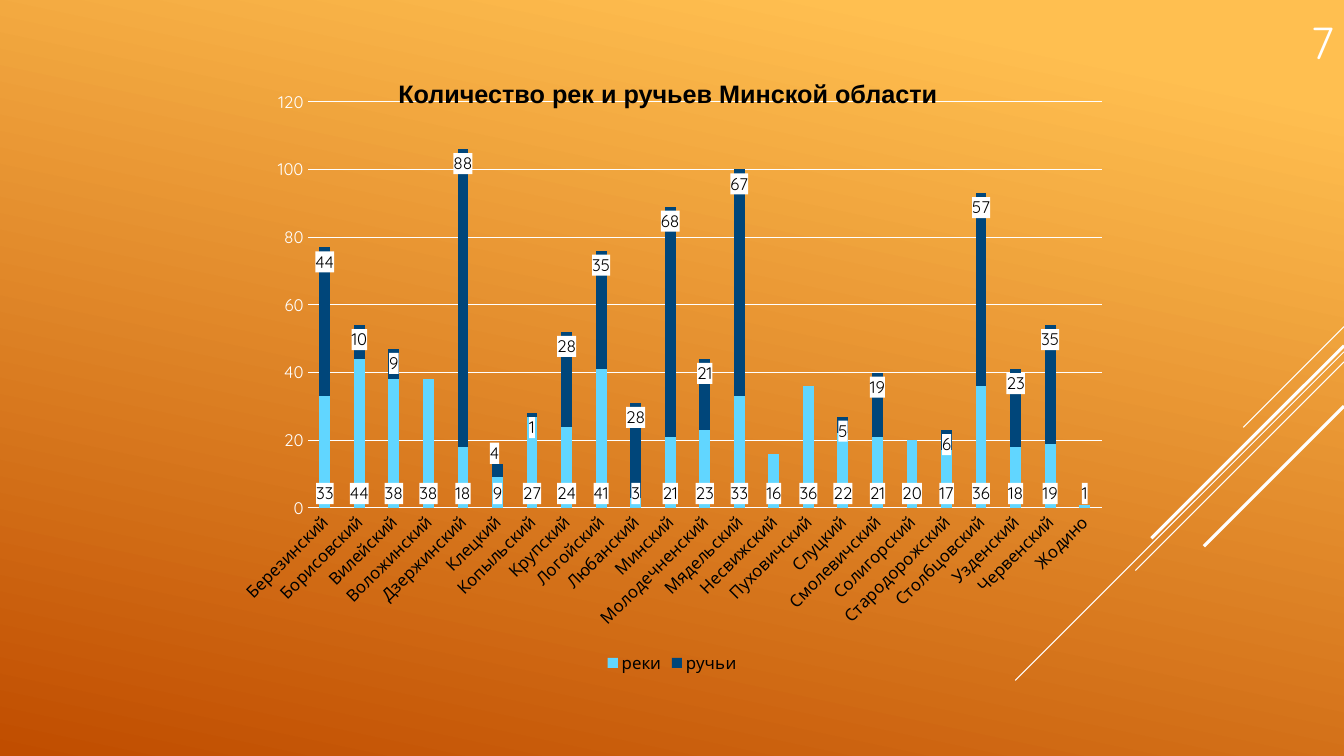
from lxml.etree import SubElement
from pptx import Presentation
from pptx.chart.data import CategoryChartData
from pptx.dml.color import RGBColor
from pptx.enum.chart import XL_CHART_TYPE, XL_LABEL_POSITION, XL_LEGEND_POSITION, XL_TICK_MARK
from pptx.enum.shapes import MSO_CONNECTOR
from pptx.enum.text import MSO_ANCHOR, PP_ALIGN
from pptx.oxml import parse_xml
from pptx.oxml.ns import nsdecls, qn
from pptx.util import Emu, Pt

PX = 9144  # one hundredth of an inch
CHART_WIDTH, CHART_HEIGHT = 889, 593

WHITE = RGBColor(0xFF, 0xFF, 0xFF)
BLACK = RGBColor(0x00, 0x00, 0x00)
AMBER = RGBColor(0xFF, 0xBF, 0x50)
RUST = RGBColor(0xC0, 0x4D, 0x00)
SKY = RGBColor(0x61, 0xD6, 0xFF)
NAVY = RGBColor(0x00, 0x46, 0x7A)

AXIS_FONT = {"name": "Quicksand", "size": Pt(12)}

# District, rivers, streams
DISTRICTS = [
    ("Березинский", 33, 44), ("Борисовский", 44, 10), ("Вилейский", 38, 9),
    ("Воложинский", 38, None), ("Дзержинский", 18, 88), ("Клецкий", 9, 4),
    ("Копыльский", 27, 1), ("Крупский", 24, 28), ("Логойский", 41, 35),
    ("Любанский", 3, 28), ("Минский", 21, 68), ("Молодечненский", 23, 21),
    ("Мядельский", 33, 67), ("Несвижский", 16, None), ("Пуховичский", 36, None),
    ("Слуцкий", 22, 5), ("Смолевичский", 21, 19), ("Солигорский", 20, None),
    ("Стародорожский", 17, 6), ("Столбцовский", 36, 57), ("Узденский", 18, 23),
    ("Червенский", 19, 35), ("Жодино", 1, None),
]
RAISED_LABEL = 5  # the Клецкий streams label stands above its short bar

# Start height at the right edge, horizontal run, line width in points
DIAGONALS = [(324, 100, 0.75), (349, 326, 0.75), (359, 207, 0.75),
             (343, 191, 2.25), (403, 139, 2.25)]


def px(*lengths):
    return [Emu(length * PX) for length in lengths]


def apply(target, values):
    for name, value in values.items():
        setattr(target, name, value)


def set_font(font, color, **values):
    apply(font, values)
    font.color.rgb = color


def paint_background(page):
    fill = page.background.fill
    fill.gradient()
    fill.gradient_angle = 258
    for stop, color, position in zip(fill.gradient_stops, (AMBER, RUST), (0.1, 1)):
        stop.color.rgb = color
        stop.position = position


def add_diagonal(page, top, run, width):
    line = page.shapes.add_connector(
        MSO_CONNECTOR.STRAIGHT, *px(1333, top, 1333 - run, top + run))
    line.line.color.rgb = WHITE
    line.line.width = Pt(width)
    SubElement(line._element.spPr, qn("a:effectLst"))


def write_text(box, text, align, anchor, wrap, color, **font):
    frame = box.text_frame
    apply(frame, {"word_wrap": wrap, "vertical_anchor": anchor})
    para = frame.paragraphs[0]
    para.alignment = align
    span = para.add_run()
    span.text = text
    set_font(span.font, color, **font)


def manual_layout(left, top, **values):
    values.update(x=left / CHART_WIDTH, y=top / CHART_HEIGHT)
    order = ("layoutTarget", "xMode", "yMode", "x", "y", "w", "h")
    parts = "".join(f'<c:{name} val="{values[name]}"/>'
                    for name in order if name in values)
    return parse_xml(f'<c:layout {nsdecls("c")}><c:manualLayout>{parts}'
                     "</c:manualLayout></c:layout>")


def format_axes(chart):
    districts, counts = chart.category_axis, chart.value_axis
    for axis, color in ((districts, BLACK), (counts, WHITE)):
        apply(axis, {"major_tick_mark": XL_TICK_MARK.NONE,
                     "minor_tick_mark": XL_TICK_MARK.NONE})
        set_font(axis.tick_labels.font, color, **AXIS_FONT)
        # Automatic label rotation
        for body in axis._element.xpath("c:txPr/a:bodyPr"):
            body.set("rot", "-60000000")
    apply(counts, {"minimum_scale": 0, "maximum_scale": 120, "major_unit": 20,
                   "has_major_gridlines": True})
    counts.format.line.fill.background()
    for line in (districts.format.line, counts.major_gridlines.format.line):
        line.color.rgb = WHITE
        line.width = Pt(0.75)


def format_series(series, color, position):
    series.format.fill.solid()
    series.format.fill.fore_color.rgb = color
    labels = series.data_labels
    apply(labels, {"show_value": True, "position": position})
    set_font(labels.font, BLACK, **AXIS_FONT)


def raise_label(series, index):
    label = series.points[index].data_label
    set_font(label.font, BLACK, **AXIS_FONT)
    label.position = XL_LABEL_POSITION.INSIDE_END
    for mark in series._element.xpath("c:dLbls/c:dLbl/c:idx"):
        mark.addnext(manual_layout(-3, -25))


def whiten_labels(series):
    for text in series._element.xpath("c:dLbls//c:txPr"):
        text.addprevious(parse_xml(
            f'<c:spPr {nsdecls("c", "a")}><a:solidFill>'
            f'<a:srgbClr val="{WHITE}"/></a:solidFill></c:spPr>'))


def add_river_chart(page):
    names, rivers, streams = zip(*DISTRICTS)
    data = CategoryChartData()
    data.categories = names
    data.add_series("реки", rivers)
    data.add_series("ручьи", streams)
    chart = page.shapes.add_chart(
        XL_CHART_TYPE.COLUMN_STACKED, *px(222, 79, CHART_WIDTH, CHART_HEIGHT), data).chart
    apply(chart, {"has_title": False, "has_legend": True})
    set_font(chart.font, WHITE, name="Quicksand", size=Pt(10))
    apply(chart.legend, {"position": XL_LEGEND_POSITION.BOTTOM,
                         "include_in_layout": False})
    set_font(chart.legend.font, BLACK, **AXIS_FONT)
    format_axes(chart)

    # Stacked columns and their labels
    plot = chart.plots[0]
    apply(plot, {"gap_width": 219, "overlap": 100, "vary_by_categories": False})
    river_series, stream_series = plot.series
    format_series(river_series, SKY, XL_LABEL_POSITION.INSIDE_BASE)
    format_series(stream_series, NAVY, XL_LABEL_POSITION.INSIDE_END)
    raise_label(stream_series, RAISED_LABEL)
    for series in plot.series:
        whiten_labels(series)

    # Fixed plot area
    area = chart._chartSpace.xpath("c:chart/c:plotArea")[0]
    for layout in area.xpath("c:layout"):
        area.remove(layout)
    area.insert(0, manual_layout(83, 22, layoutTarget="inner", xMode="edge", yMode="edge",
                                 w=788 / CHART_WIDTH, h=403 / CHART_HEIGHT))


def add_heading(page):
    title = page.shapes.title
    left, top, width, height = px(385, 73, 576, 40)
    apply(title, {"left": left, "top": top, "width": width, "height": height})
    write_text(title, "Количество рек и ручьев Минской области", PP_ALIGN.LEFT,
               MSO_ANCHOR.TOP, False, BLACK, name="Arial", size=Pt(18), bold=True)
    page.shapes._spTree.append(title._element)  # in front of the chart


def main():
    deck = Presentation()
    deck.slide_width, deck.slide_height = px(1333, 750)
    page = deck.slides.add_slide(deck.slide_layouts[5])

    # Backdrop
    paint_background(page)
    for diagonal in DIAGONALS:
        add_diagonal(page, *diagonal)

    # Page number, chart and heading
    number = page.shapes.add_textbox(*px(1208, 0, 125, 73))
    write_text(number, "7", PP_ALIGN.RIGHT, MSO_ANCHOR.BOTTOM, True, WHITE,
               name="Quicksand", size=Pt(32))
    add_river_chart(page)
    add_heading(page)
    deck.save("out.pptx")


if __name__ == "__main__":
    main()
